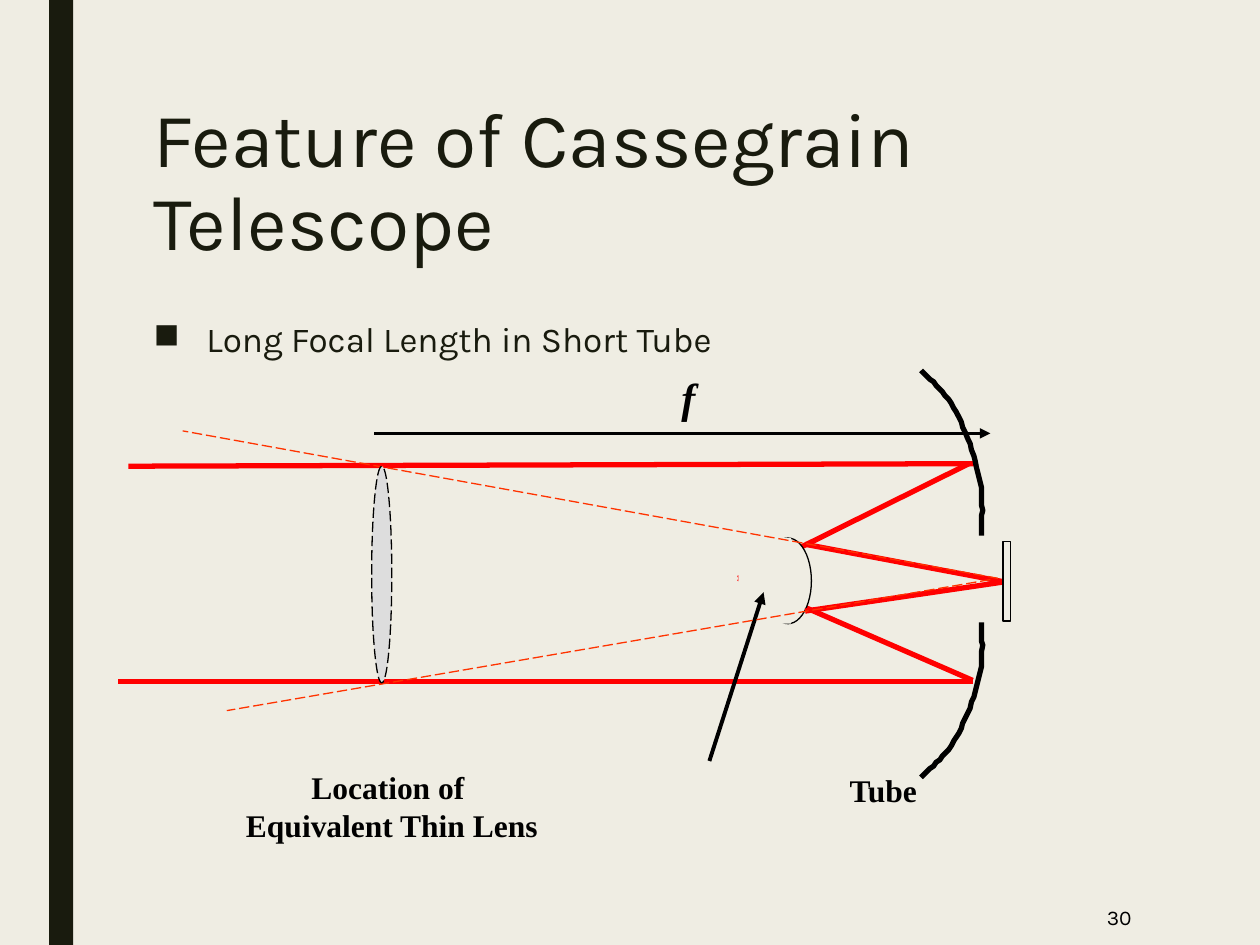
from lxml.etree import SubElement
from pptx import Presentation
from pptx.dml.color import RGBColor
from pptx.enum.dml import MSO_LINE
from pptx.enum.shapes import MSO_CONNECTOR, MSO_SHAPE
from pptx.enum.text import MSO_ANCHOR, PP_ALIGN
from pptx.oxml.ns import qn
from pptx.util import Emu, Pt

PX = 9144  # EMU per px, 100 px to the inch
CURVE_STEPS = 12

PAPER = RGBColor(0xEF, 0xED, 0xE3)
INK = RGBColor(0x19, 0x1B, 0x0E)
BLACK = RGBColor(0, 0, 0)
RAY = RGBColor(0xFF, 0, 0)
VIRTUAL_RAY = RGBColor(0xFF, 0x33, 0)
GLASS = RGBColor(0xDD, 0xDD, 0xDD)

TITLE = dict(name="Karla", size=Pt(44), color=INK)
BODY = dict(name="Karla", size=Pt(20), color=INK)
NUMBER = dict(name="Karla", size=Pt(12), color=BLACK)
LABEL = dict(name="Times New Roman", size=Pt(18), bold=True, color=BLACK)
SYMBOL = dict(LABEL, size=Pt(24), italic=True)


def px(*values):
    return [Emu(v * PX) for v in values]


def format_font(font, style):
    for key, value in style.items():
        if key == "color":
            font.color.rgb = value
        else:
            setattr(font, key, value)


def format_line(line, color, width, dash=None):
    line.color.rgb = color
    line.width = Pt(width)
    if dash:
        line.dash_style = dash


def set_text(sp, lines, style, **paragraph_format):
    tf = sp.text_frame
    for i, text in enumerate(lines):
        p = tf.paragraphs[0] if i == 0 else tf.add_paragraph()
        for key, value in paragraph_format.items():
            setattr(p, key, value)
        r = p.add_run()
        r.text = text
        format_font(r.font, style)
    return tf


def add_text(s, box, lines, style, wrap=False, **paragraph_format):
    sp = s.shapes.add_textbox(*px(*box))
    tf = set_text(sp, lines, style, **paragraph_format)
    tf.word_wrap = wrap
    return tf


def add_bullet(p, char, indent):
    pPr = p._p.get_or_add_pPr()
    pPr.set("marL", str(indent * PX))
    pPr.set("indent", str(-indent * PX))
    SubElement(pPr, qn("a:buChar")).set("char", char)


def add_shape(shapes, kind, box, fill, outline=None, dash=None):
    sp = shapes.add_shape(kind, *px(*box))
    sp.shadow.inherit = False
    sp.fill.solid()
    sp.fill.fore_color.rgb = fill
    if outline is None:
        sp.line.fill.background()
    else:
        format_line(sp.line, outline, 0.75, dash)


def add_line(s, ends, color, width, dash=None, arrow=False):
    c = s.shapes.add_connector(MSO_CONNECTOR.STRAIGHT, *px(*ends))
    format_line(c.line, color, width, dash)
    if arrow:
        SubElement(c.line._get_or_add_ln(), qn("a:tailEnd")).set("type", "triangle")
    SubElement(c._element.spPr, qn("a:effectLst"))


def bezier(p0, p1, p2, p3):
    """Points along a cubic curve, without its start."""
    for i in range(1, CURVE_STEPS + 1):
        t = i / CURVE_STEPS
        u = 1 - t
        yield tuple(u**3 * a + 3 * u * u * t * b + 3 * u * t * t * c + t**3 * d
                    for a, b, c, d in zip(p0, p1, p2, p3))


def add_mirror(s, points):
    """Open outline through chained cubic curves."""
    fb = s.shapes.build_freeform(*points[0], scale=PX)
    for i in range(0, len(points) - 1, 3):
        fb.add_line_segments(list(bezier(*points[i:i + 4])), close=False)
    sp = fb.convert_to_shape()
    sp.shadow.inherit = False
    sp.fill.background()
    format_line(sp.line, BLACK, 3)


def add_frame(s):
    s.background.fill.solid()
    s.background.fill.fore_color.rgb = PAPER
    add_shape(s.shapes, MSO_SHAPE.RECTANGLE, (39, 0, 19, 750), INK)

    title = s.shapes.title
    title.left, title.top, title.width, title.height = px(112, 75, 788, 162)
    tf = set_text(title, ["Feature of Cassegrain Telescope"], TITLE,
                  alignment=PP_ALIGN.LEFT, line_spacing=0.9)
    tf.vertical_anchor = MSO_ANCHOR.TOP
    tf.word_wrap = True

    tf = add_text(s, (112, 250, 788, 392), ["Long Focal Length in Short Tube"], BODY,
                  wrap=True, line_spacing=0.94)
    add_bullet(tf.paragraphs[0], "■", 42)

    tf = add_text(s, (777, 706, 131, 44), ["30"], NUMBER,
                  wrap=True, alignment=PP_ALIGN.RIGHT)
    tf.vertical_anchor = MSO_ANCHOR.MIDDLE


def add_telescope(s):
    # Incoming rays and their reflections from the primary mirror
    for ends in ((102, 370, 774, 368), (586, 459, 769, 368),
                 (94, 541, 772, 541), (586, 459, 772, 540)):
        add_line(s, ends, RAY, 3)

    # Secondary mirror: an ellipse with its left part covered
    secondary = s.shapes.add_group_shape().shapes
    add_shape(secondary, MSO_SHAPE.OVAL, (607, 427, 37, 68), PAPER, BLACK)
    add_shape(secondary, MSO_SHAPE.RECTANGLE, (586, 427, 42, 68), PAPER)

    # Rays to the focus, and the detector there
    add_line(s, (639, 432, 798, 462), RAY, 3)
    add_line(s, (639, 485, 796, 462), RAY, 3)
    add_shape(s.shapes, MSO_SHAPE.RECTANGLE, (796, 430, 6, 63), PAPER, BLACK)

    # Pointer to the secondary mirror
    add_line(s, (563, 604, 606, 470), BLACK, 2.25, arrow=True)

    # Rays extended back to the equivalent thin lens
    for ends in ((792, 459, 145, 342), (786, 460, 180, 564)):
        add_line(s, ends, VIRTUAL_RAY, 0.75, MSO_LINE.LONG_DASH)
    add_shape(s.shapes, MSO_SHAPE.OVAL, (295, 370, 16, 172), GLASS, BLACK,
              MSO_LINE.LONG_DASH)

    # Focal length
    add_line(s, (297, 344, 786, 344), BLACK, 1.5, arrow=True)

    # Primary mirror halves
    add_mirror(s, [(731, 294), (741, 303), (751, 313), (759, 327), (766, 341),
                   (774, 363), (777, 379), (781, 395), (779, 417), (779, 425)])
    add_mirror(s, [(731, 617), (741, 608), (751, 599), (759, 585), (766, 572),
                   (774, 552), (777, 537), (781, 522), (779, 501), (779, 494)])


def add_labels(s):
    add_text(s, (185, 605, 252, 70), ["Location of ", "Equivalent Thin Lens"], LABEL,
             alignment=PP_ALIGN.CENTER)
    add_text(s, (664, 607, 74, 40), ["Tube"], LABEL, alignment=PP_ALIGN.CENTER)
    add_text(s, (531, 290, 31, 50), ["f"], SYMBOL)


def main():
    prs = Presentation()
    prs.slide_width, prs.slide_height = px(1000, 750)
    s = prs.slides.add_slide(prs.slide_layouts[5])
    add_frame(s)
    add_telescope(s)
    add_labels(s)
    prs.save("out.pptx")


if __name__ == "__main__":
    main()
